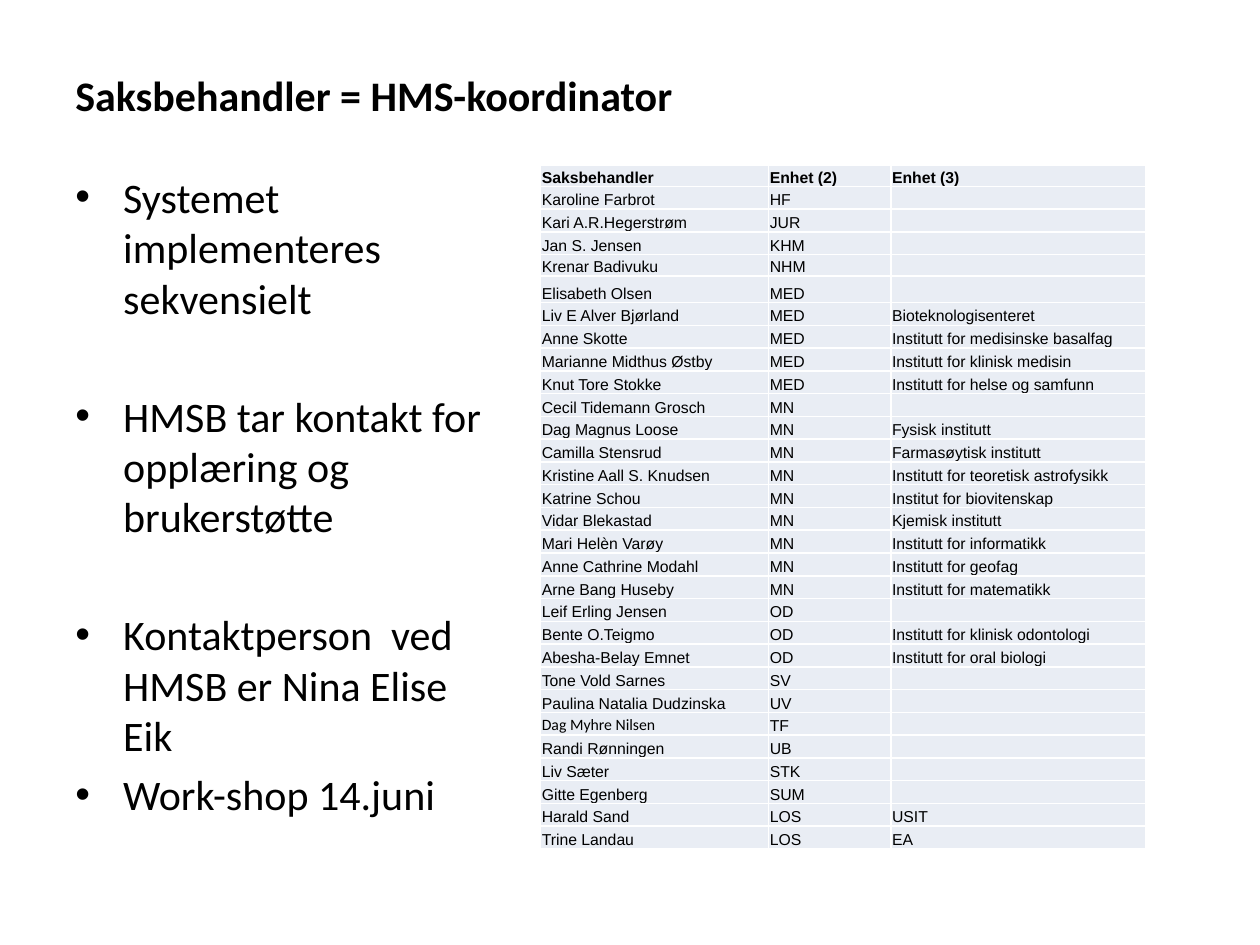
from lxml.etree import SubElement
from pptx import Presentation
from pptx.dml.color import RGBColor
from pptx.enum.text import MSO_VERTICAL_ANCHOR as Anchor
from pptx.oxml.ns import qn
from pptx.util import Inches, Pt

BLACK = RGBColor(0x00, 0x00, 0x00)
WHITE = RGBColor(0xFF, 0xFF, 0xFF)
CELL_FILL = RGBColor(0xE9, 0xED, 0xF4)

TITLE = "Saksbehandler = HMS-koordinator"

# Text and space before in points
BULLETS = [
    ("Systemet implementeres sekvensielt", 0),
    ("HMSB tar kontakt for opplæring og  brukerstøtte", 38.6),
    ("Kontaktperson  ved HMSB er Nina Elise Eik", 38.6),
    ("Work-shop 14.juni", 4.8),
]

HEADER = ("Saksbehandler", "Enhet (2)", "Enhet (3)")
CASE_HANDLERS = [
    ("Karoline Farbrot", "HF", ""),
    ("Kari A.R.Hegerstrøm", "JUR", ""),
    ("Jan S. Jensen", "KHM", ""),
    ("Krenar Badivuku", "NHM", ""),
    ("Elisabeth Olsen", "MED", ""),
    ("Liv E Alver Bjørland", "MED", "Bioteknologisenteret"),
    ("Anne Skotte", "MED", "Institutt for medisinske basalfag"),
    ("Marianne Midthus Østby", "MED", "Institutt for klinisk medisin"),
    ("Knut Tore Stokke", "MED", "Institutt for helse og samfunn"),
    ("Cecil Tidemann Grosch", "MN", ""),
    ("Dag Magnus Loose", "MN", "Fysisk institutt"),
    ("Camilla Stensrud", "MN", "Farmasøytisk institutt"),
    ("Kristine Aall S. Knudsen", "MN", "Institutt for teoretisk astrofysikk"),
    ("Katrine Schou", "MN", "Institut for biovitenskap"),
    ("Vidar Blekastad", "MN", "Kjemisk institutt"),
    ("Mari Helèn Varøy", "MN", "Institutt for informatikk"),
    ("Anne Cathrine Modahl", "MN", "Institutt for geofag"),
    ("Arne Bang Huseby", "MN", "Institutt for matematikk"),
    ("Leif Erling Jensen", "OD", ""),
    ("Bente O.Teigmo", "OD", "Institutt for klinisk odontologi"),
    ("Abesha-Belay Emnet", "OD", "Institutt for oral biologi"),
    ("Tone Vold Sarnes", "SV", ""),
    ("Paulina Natalia Dudzinska", "UV", ""),
    ("Dag Myhre Nilsen", "TF", ""),
    ("Randi Rønningen", "UB", ""),
    ("Liv Sæter", "STK", ""),
    ("Gitte Egenberg", "SUM", ""),
    ("Harald Sand", "LOS", "USIT"),
    ("Trine Landau", "LOS", "EA"),
]
CALIBRI_NAME = "Dag Myhre Nilsen"

TABLE_HEIGHT = 5.43
COLUMN_WIDTHS = (1.81, 0.97, 2.02)
SPECIAL_HEIGHTS = {0: 0.17, 4: 0.17, 5: 0.21}

HEADING_FORMAT = {"name": "Calibri", "size": Pt(24), "bold": True}
BULLET_FORMAT = {"name": "Calibri", "size": Pt(24), "bold": False}
CELL_FORMAT = {"name": "Arial", "size": Pt(9), "bold": False}
CELL_LAYOUT = {
    "vertical_anchor": Anchor.BOTTOM,
    "margin_left": Inches(0.01),
    "margin_top": Inches(0.01),
    "margin_right": Inches(0.01),
    "margin_bottom": 0,
}


def set_all(target, values):
    for name, value in values.items():
        setattr(target, name, value)


def add_run(paragraph, text, font_format):
    run = paragraph.add_run()
    run.text = text
    set_all(run.font, font_format)
    run.font.color.rgb = BLACK


def add_text_frame(slide, left, top, width, height, anchor):
    box = slide.shapes.add_textbox(*map(Inches, (left, top, width, height)))
    set_all(box.text_frame, {"word_wrap": True, "vertical_anchor": anchor})
    return box.text_frame


def add_title(slide):
    frame = add_text_frame(slide, 0.5, 0.3, 9, 0.91, Anchor.MIDDLE)
    add_run(frame.paragraphs[0], TITLE, HEADING_FORMAT)


def add_bullets(slide):
    frame = add_text_frame(slide, 0.5, 1.31, 3.56, 5.39, Anchor.TOP)
    for index, (text, space_before) in enumerate(BULLETS):
        paragraph = frame.add_paragraph() if index else frame.paragraphs[0]
        paragraph.space_before = Pt(space_before)
        properties = paragraph._p.get_or_add_pPr()
        properties.set("marL", str(Inches(0.38)))
        properties.set("indent", str(Inches(-0.38)))
        SubElement(properties, qn("a:buFont"), typeface="Arial")
        SubElement(properties, qn("a:buChar"), char="•")
        add_run(paragraph, text, BULLET_FORMAT)


def add_borders(cell):
    properties = cell._tc.get_or_add_tcPr()
    for index, side in enumerate(("lnL", "lnR", "lnT", "lnB")):
        line = properties.makeelement(qn(f"a:{side}"), {"w": str(Pt(1))})
        fill = SubElement(line, qn("a:solidFill"))
        SubElement(fill, qn("a:srgbClr"), val=str(WHITE))
        properties.insert(index, line)


def fill_cell(cell, text, bold):
    set_all(cell, CELL_LAYOUT)
    cell.fill.solid()
    cell.fill.fore_color.rgb = CELL_FILL
    add_borders(cell)
    paragraph = cell.text_frame.paragraphs[0]
    if text:
        font = "Calibri" if text == CALIBRI_NAME else "Arial"
        add_run(paragraph, text, {**CELL_FORMAT, "name": font, "bold": bold})
    else:
        # Keeps empty cells from stretching their row
        SubElement(paragraph._p, qn("a:endParaRPr"), sz="900")


def add_handler_table(slide):
    rows = [HEADER, *CASE_HANDLERS]
    frame = slide.shapes.add_table(
        len(rows), len(HEADER), Inches(4.29), Inches(1.31),
        Inches(sum(COLUMN_WIDTHS)), Inches(TABLE_HEIGHT))
    table = frame.table
    set_all(table, {"first_row": False, "horz_banding": False})
    for column, width in zip(table.columns, COLUMN_WIDTHS):
        column.width = Inches(width)

    # Ordinary rows share the height left by the special ones
    remaining = TABLE_HEIGHT - sum(SPECIAL_HEIGHTS.values())
    row_height = remaining / (len(rows) - len(SPECIAL_HEIGHTS))
    for index, (row, texts) in enumerate(zip(table.rows, rows)):
        row.height = Inches(SPECIAL_HEIGHTS.get(index, row_height))
        for cell, text in zip(row.cells, texts):
            fill_cell(cell, text, bold=index == 0)


def main():
    presentation = Presentation()
    set_all(presentation, {"slide_width": Inches(10), "slide_height": Inches(7.5)})
    slide = presentation.slides.add_slide(presentation.slide_layouts[6])
    add_title(slide)
    add_bullets(slide)
    add_handler_table(slide)
    presentation.save("out.pptx")


if __name__ == "__main__":
    main()
